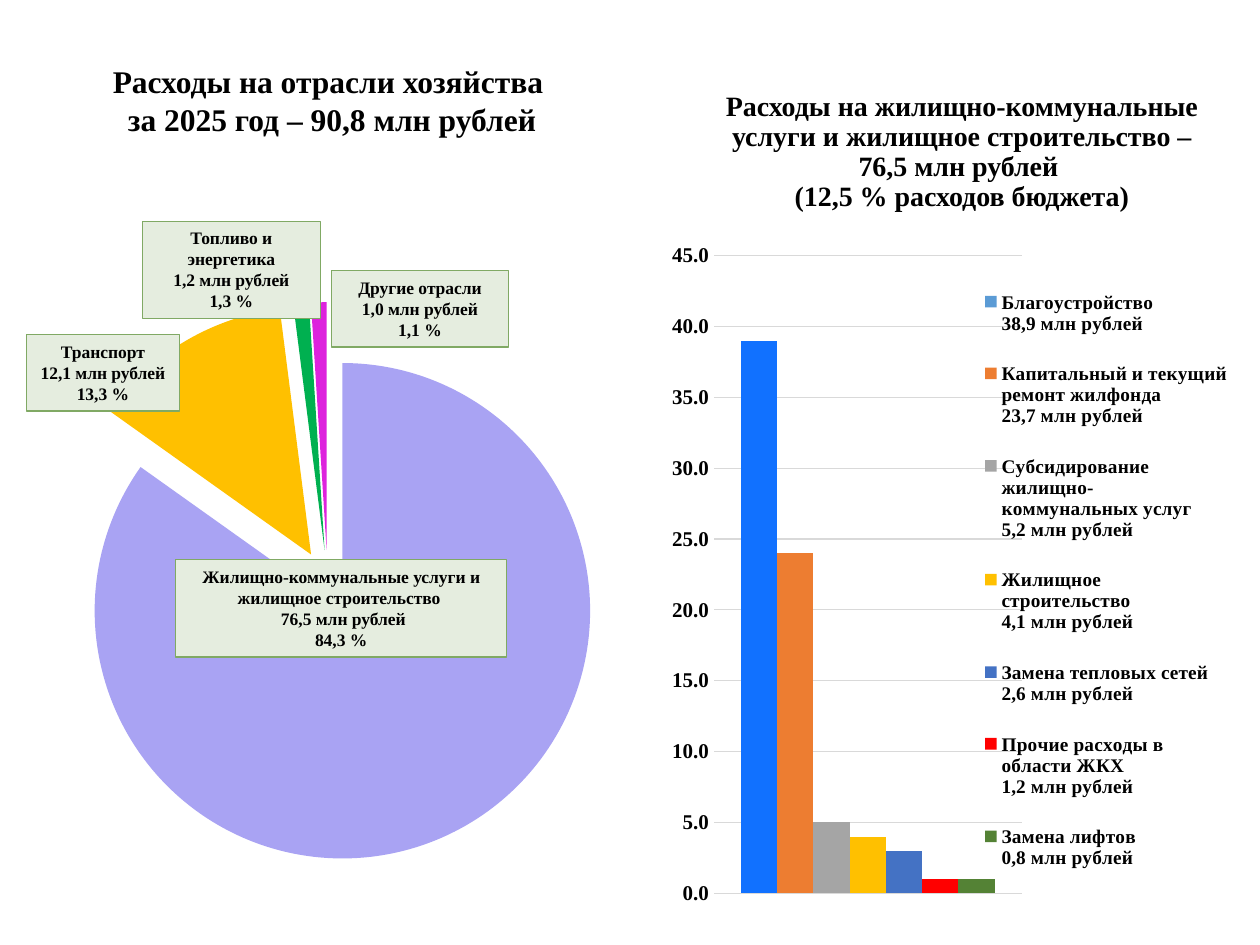
from lxml.etree import SubElement
from pptx import Presentation
from pptx.chart.data import CategoryChartData
from pptx.dml.color import RGBColor
from pptx.enum.chart import XL_CHART_TYPE as ChartType, XL_LEGEND_POSITION as LegendPosition
from pptx.enum.chart import XL_TICK_MARK as TickMark
from pptx.enum.shapes import MSO_SHAPE as ShapeType
from pptx.enum.text import MSO_ANCHOR as Anchor, MSO_AUTO_SIZE as AutoSize, PP_ALIGN as Align
from pptx.oxml import parse_xml
from pptx.oxml.ns import nsdecls, qn
from pptx.util import Pt

COLORS = {
    "text": "000000", "grid": "D9D9D9", "label": "E5EDDF", "label_line": "80A964",
    "housing": "A9A3F3", "transport": "FFC000", "fuel": "00B050", "other": "DD23DD",
    "first_bar": "1171FF", "improvement": "5B9BD5", "repair": "ED7D31",
    "subsidy": "A5A5A5", "construction": "FFC000", "heating": "4472C4",
    "misc": "FF0000", "lifts": "548235",
}
RGB = {name: RGBColor.from_string(value) for name, value in COLORS.items()}


def write_text(frame, lines, size, line_spacing=1.0):
    """Fill a text frame with centred bold paragraphs."""
    frame.word_wrap = True
    frame.auto_size = AutoSize.NONE
    frame.vertical_anchor = Anchor.TOP
    for index, line in enumerate(lines):
        paragraph = frame.paragraphs[0] if index == 0 else frame.add_paragraph()
        paragraph.text = line
        paragraph.alignment = Align.CENTER
        paragraph.line_spacing = line_spacing
        font = paragraph.runs[0].font
        font.color.rgb = RGB["text"]
        for key, value in {"name": "Times New Roman", "size": Pt(size), "bold": True}.items():
            setattr(font, key, value)


def place_part(parent, position, box, inner=False):
    """Give a chart part a manual layout as fractions of the chart."""
    for old in parent.findall(qn("c:layout")):
        parent.remove(old)
    layout = parse_xml(f"<c:layout {nsdecls('c')}/>")
    manual = SubElement(layout, qn("c:manualLayout"))
    settings = [("layoutTarget", "inner")] if inner else []
    settings += [("xMode", "edge"), ("yMode", "edge"), *zip("xywh", box)]
    for tag, value in settings:
        SubElement(manual, qn(f"c:{tag}")).set("val", str(value))
    parent.insert(position, layout)


presentation = Presentation()
presentation.slide_width, presentation.slide_height = Pt(720), Pt(540)
slide = presentation.slides.add_slide(presentation.slide_layouts[5])

# Titles
title = slide.shapes.title
title.left, title.top, title.width, title.height = Pt(42.5), Pt(32), Pt(294.5), Pt(51)
write_text(title.text_frame, ["Расходы на отрасли хозяйства ", "за 2025 год – 90,8 млн рублей"], 18)

housing_title = slide.shapes.add_textbox(Pt(399.6), Pt(49), Pt(300.2), Pt(77))
write_text(housing_title.text_frame, [
    "Расходы на жилищно-коммунальные услуги и жилищное строительство – 76,5 млн рублей ",
    "(12,5 % расходов бюджета)",
], 16, 0.9)

# Column chart: housing spending
columns = [
    ("Благоустройство\n38,9 млн рублей", 39, "improvement"),
    ("Капитальный и текущий ремонт жилфонда\n23,7 млн рублей", 24, "repair"),
    ("Субсидирование жилищно-коммунальных услуг \n5,2 млн рублей", 5, "subsidy"),
    ("Жилищное строительство\n4,1 млн рублей", 4, "construction"),
    ("Замена тепловых сетей\n2,6 млн рублей", 3, "heating"),
    ("Прочие расходы в области ЖКХ\n1,2 млн рублей", 1, "misc"),
    ("Замена лифтов\n0,8 млн рублей", 1, "lifts"),
]
column_data = CategoryChartData()
column_data.categories = ["1"]
for name, value, _ in columns:
    column_data.add_series(name, [value])
column_chart = slide.shapes.add_chart(
    ChartType.COLUMN_CLUSTERED, Pt(375.2), Pt(138.4), Pt(334), Pt(386.8), column_data).chart
column_chart.has_title = False
column_plot = column_chart.plots[0]
column_plot.gap_width = 150
column_plot.overlap = 0
column_plot.vary_by_categories = False
for series, (_, _, color) in zip(column_plot.series, columns):
    series.format.fill.solid()
    series.format.fill.fore_color.rgb = RGB[color]
first_bar = column_plot.series[0].points[0].format.fill
first_bar.solid()
first_bar.fore_color.rgb = RGB["first_bar"]

column_chart.category_axis.visible = False
value_axis = column_chart.value_axis
axis_format = {"minimum_scale": 0, "maximum_scale": 45, "major_unit": 5,
               "major_tick_mark": TickMark.NONE, "minor_tick_mark": TickMark.NONE}
for key, value in axis_format.items():
    setattr(value_axis, key, value)
value_axis.format.line.fill.background()
value_axis.major_gridlines.format.line.color.rgb = RGB["grid"]
value_axis.major_gridlines.format.line.width = Pt(0.75)
value_axis.tick_labels.number_format = "0.0"
value_axis.tick_labels.number_format_is_linked = False

column_chart.has_legend = True
legend = column_chart.legend
legend.position = LegendPosition.RIGHT
legend.include_in_layout = False

# Pie chart: all branches
slices = [(84, "housing"), (13, "transport"), (1, "fuel"), (1, "other")]
pie_data = CategoryChartData()
pie_data.categories = ["1", "2", "3", "4"]
pie_data.add_series("Series 1", [value for value, _ in slices])
pie_chart = slide.shapes.add_chart(
    ChartType.PIE, Pt(26.6), Pt(147.8), Pt(334), Pt(377.4), pie_data).chart
pie_chart.has_title = False
pie_chart.has_legend = False
pie_series = pie_chart.plots[0].series[0]
explosion = parse_xml(f'<c:explosion {nsdecls("c")} val="13"/>')
pie_series._element.find(qn("c:tx")).addnext(explosion)
for index, (_, color) in enumerate(slices):
    fill = pie_series.points[index].format.fill
    fill.solid()
    fill.fore_color.rgb = RGB[color]

for chart, box in [(column_chart, (0.098, 0.02, 0.527, 0.942)),
                   (pie_chart, (0.002, 0.004, 0.958, 0.972))]:
    chart.font.name = "Calibri"
    chart.font.size = Pt(10)
    chart.font.color.rgb = RGB["text"]
    place_part(chart._chartSpace.chart.plotArea, 0, box, inner=True)
place_part(legend._element, 1, (0.58, 0.03, 0.417, 0.94))
for font, size in [(value_axis.tick_labels.font, 12), (legend.font, 11)]:
    font.color.rgb = RGB["text"]
    for key, value in {"name": "Times New Roman", "size": Pt(size), "bold": True}.items():
        setattr(font, key, value)

# Slice labels
labels = [
    (15.1, 191.2, 87.4, 43.7, ["Транспорт", "12,1 млн рублей", "13,3 %"]),
    (189.4, 154.6, 101.2, 43.7, ["Другие отрасли", "1,0 млн рублей", "1,1 %"]),
    (81.4, 126.4, 101.6, 55.5, ["Топливо и энергетика", "1,2 млн рублей", "1,3 %"]),
    (100.5, 319.7, 189, 55.8,
     ["Жилищно-коммунальные услуги и жилищное строительство ", " 76,5 млн рублей", "84,3 %"]),
]
for left, top, width, height, lines in labels:
    label = slide.shapes.add_shape(ShapeType.RECTANGLE, Pt(left), Pt(top), Pt(width), Pt(height))
    label.shadow.inherit = False
    label.fill.solid()
    label.fill.fore_color.rgb = RGB["label"]
    label.line.color.rgb = RGB["label_line"]
    label.line.width = Pt(0.75)
    write_text(label.text_frame, lines, 10)

presentation.save("out.pptx")
